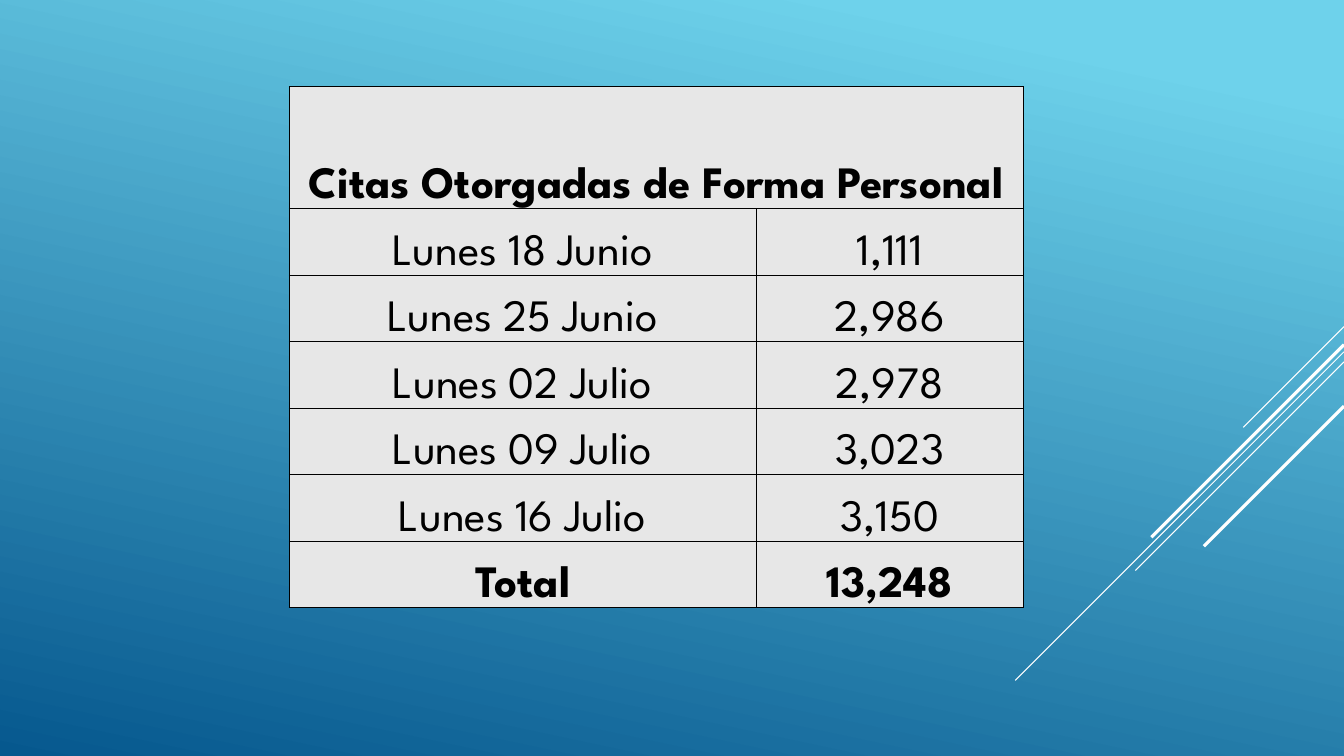
from lxml.etree import SubElement
from pptx import Presentation
from pptx.dml.color import RGBColor
from pptx.enum.shapes import MSO_CONNECTOR
from pptx.enum.text import MSO_ANCHOR, PP_ALIGN
from pptx.oxml.ns import qn
from pptx.util import Inches, Pt

LIGHT = RGBColor(0x6E, 0xD2, 0xEB)
DARK = RGBColor(0x06, 0x58, 0x8E)
WHITE = RGBColor(0xFF, 0xFF, 0xFF)
BLACK = RGBColor(0x00, 0x00, 0x00)
GREY = RGBColor(0xE7, 0xE7, 0xE7)
FONT = "League Spartan"
WIDTH, HEIGHT = 13.33, 7.5

TITLE = "Citas Otorgadas de Forma Personal"
ROWS = [
    ("Lunes 18 Junio", "1,111"),
    ("Lunes 25 Junio", "2,986"),
    ("Lunes 02 Julio", "2,978"),
    ("Lunes 09 Julio", "3,023"),
    ("Lunes 16 Julio", "3,150"),
    ("Total", "13,248"),
]
# Top offset, length along each axis, weight in points
RAYS = [(0, 1, 0.75), (0.25, 3.26, 0.75), (0.35, 2.07, 0.75),
        (0.18, 1.91, 2.25), (0.79, 1.39, 2.25)]


def paint_back(slide):
    fill = slide.background.fill
    fill.gradient()
    fill.gradient_angle = 258
    for stop, place, color in zip(fill.gradient_stops, (0.1, 1), (LIGHT, DARK)):
        stop.position = place
        stop.color.rgb = color


def add_rays(slide, right, top):
    """Draw 45-degree rays down and left from the right edge."""
    for drop, size, weight in RAYS:
        start = top + drop
        ray = slide.shapes.add_connector(
            MSO_CONNECTOR.STRAIGHT, Inches(right), Inches(start),
            Inches(right - size), Inches(start + size))
        ray.line.color.rgb = WHITE
        ray.line.width = Pt(weight)
        SubElement(ray.element.spPr, qn("a:effectLst"))


def add_edges(cell):
    props = cell._tc.get_or_add_tcPr()
    for side in ("lnL", "lnR", "lnT", "lnB"):
        edge = SubElement(props, qn(f"a:{side}"), w=str(Pt(1)))
        fill = SubElement(edge, qn("a:solidFill"))
        SubElement(fill, qn("a:srgbClr"), val=str(BLACK))


def style_cell(cell, text, bold):
    add_edges(cell)
    cell.fill.solid()
    cell.fill.fore_color.rgb = GREY
    cell.vertical_anchor = MSO_ANCHOR.BOTTOM
    cell.margin_left = cell.margin_right = cell.margin_top = Inches(0.01)
    cell.margin_bottom = 0
    cell.text = text
    para = cell.text_frame.paragraphs[0]
    para.alignment = PP_ALIGN.CENTER
    font = para.font
    font.name, font.size, font.bold = FONT, Pt(32), bold
    font.color.rgb = BLACK


def add_dates(slide, left, top, width, height):
    count = len(ROWS) + 1
    table = slide.shapes.add_table(
        count, 2, Inches(left), Inches(top), Inches(width), Inches(height)).table
    # Column and row sizes
    first, head = 4.63, 1.21
    table.columns[0].width = Inches(first)
    table.columns[1].width = Inches(width - first)
    table.rows[0].height = Inches(head)
    for row in list(table.rows)[1:]:
        row.height = Inches((height - head) / len(ROWS))
    # Heading, dates and total
    table.cell(0, 0).merge(table.cell(0, 1))
    for i, row in enumerate([(TITLE, "")] + ROWS):
        for j, text in enumerate(row):
            style_cell(table.cell(i, j), text, i in (0, count - 1))


def main():
    deck = Presentation()
    deck.slide_width, deck.slide_height = Inches(WIDTH), Inches(HEIGHT)
    slide = deck.slides.add_slide(deck.slide_layouts[6])
    paint_back(slide)
    add_rays(slide, WIDTH, 3.24)
    add_dates(slide, 2.87, 0.86, 7.28, 5.17)
    deck.save("out.pptx")


if __name__ == "__main__":
    main()
